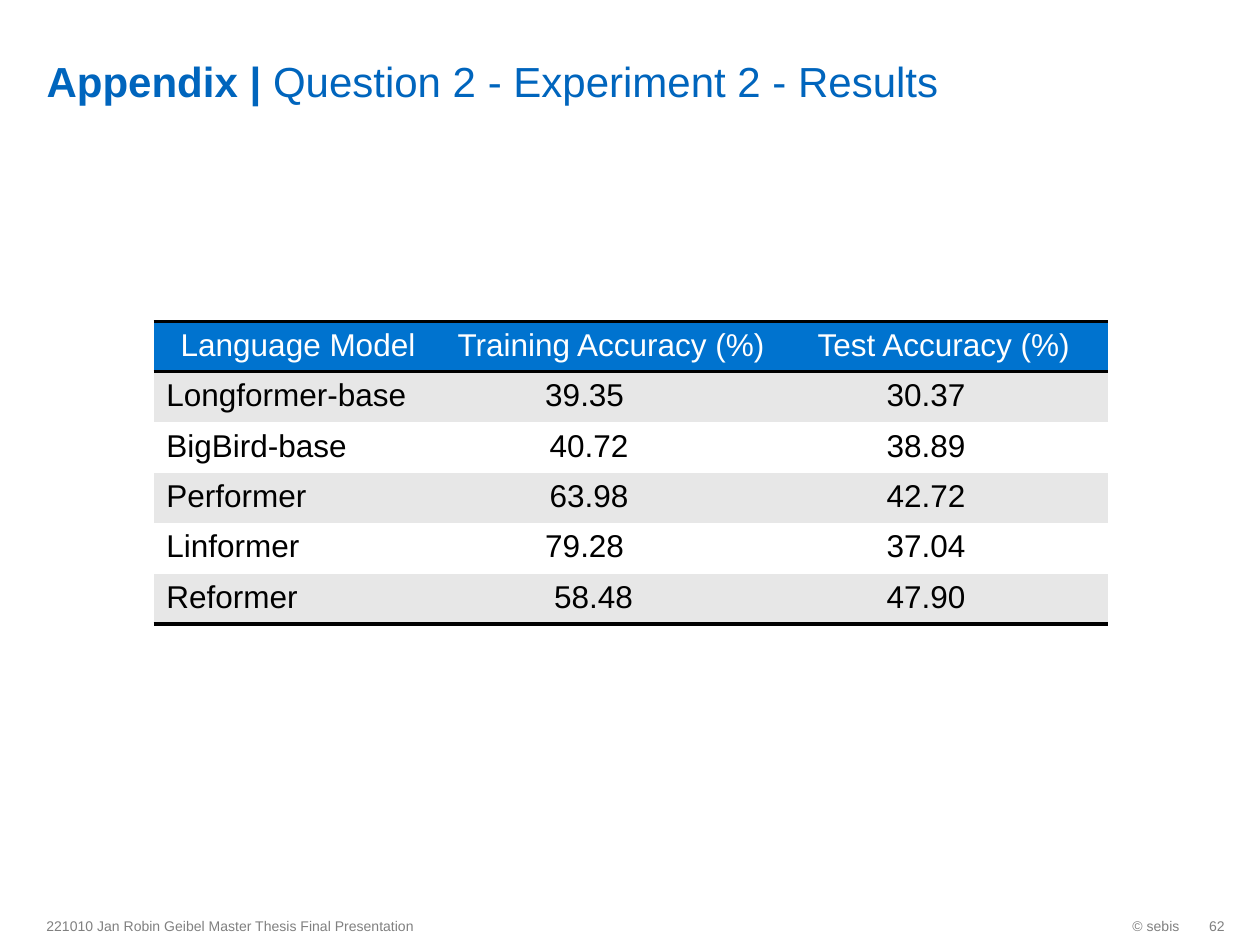
"""Build the appendix slide with the accuracy table of experiment 2."""
from lxml import etree
from pptx import Presentation
from pptx import util as u
from pptx.dml.color import RGBColor
from pptx.enum import text
from pptx.oxml.ns import qn

COLORS = {"title": "0065BD", "header": "0073CF", "band": "E7E7E7",
          "white": "FFFFFF", "black": "000000", "footer": "808080"}
NO_STYLE = "{2D5ABB26-0587-4C30-8999-92F81FD0307C}"
LEFT = 0.27
FOOTER_TOP, FOOTER_HEIGHT = 7.19, 0.32
ROW_HEIGHT = 0.39
COLUMNS = [2.29, 2.68, 2.6]
INSET, SPACE = 0.1, 0.07


def style(r, size, color, bold=False):
    r.font.name = "Arial"
    r.font.size = u.Pt(size)
    r.font.bold = bold
    r.font.color.rgb = RGBColor.from_string(COLORS[color])


def add_border(cell, side):
    ln = etree.SubElement(cell._tc.get_or_add_tcPr(), qn(f"a:{side}"), w=str(u.Pt(2)))
    fill = etree.SubElement(ln, qn("a:solidFill"))
    etree.SubElement(fill, qn("a:srgbClr"), val=COLORS["black"])


prs = Presentation()
prs.slide_width, prs.slide_height = u.Inches(10), u.Inches(7.5)
s = prs.slides.add_slide(prs.slide_layouts[5])

title = s.shapes.title
title.left, title.top = u.Inches(LEFT), u.Inches(0.05)
title.width, title.height = u.Inches(8.24), u.Inches(0.79)
tf = title.text_frame
tf.auto_size = text.MSO_AUTO_SIZE.NONE
tf.vertical_anchor = text.MSO_ANCHOR.BOTTOM
tf.margin_top = tf.margin_bottom = 0
p = tf.paragraphs[0]
p.alignment = text.PP_ALIGN.LEFT
for words, bold in [("Appendix | ", True), ("Question 2 - Experiment 2 - Results", False)]:
    r = p.add_run()
    r.text = words
    style(r, 24, "title", bold)

footers = [
    ("© sebis", 7.7, 1.76, INSET, text.PP_ALIGN.RIGHT),
    ("221010 Jan Robin Geibel Master Thesis Final Presentation", LEFT, 4.73, INSET, text.PP_ALIGN.LEFT),
    ("62", 9.45, 0.27, 0, text.PP_ALIGN.RIGHT),
]
for words, left, width, margin, align in footers:
    sp = s.shapes.add_textbox(u.Inches(left), u.Inches(FOOTER_TOP),
                              u.Inches(width), u.Inches(FOOTER_HEIGHT))
    tf = sp.text_frame
    tf.word_wrap = True
    tf.vertical_anchor = text.MSO_ANCHOR.MIDDLE
    tf.margin_right = u.Inches(margin)
    tf.text = words
    p = tf.paragraphs[0]
    p.alignment = align
    style(p.runs[0], 8, "footer")

rows = [
    ("Language Model", "Training Accuracy (%)", "Test Accuracy (%)"),
    ("Longformer-base", "39.35", "30.37"),
    ("BigBird-base", "40.72", "38.89"),
    ("Performer", "63.98", "42.72"),
    ("Linformer", "79.28", "37.04"),
    ("Reformer", "58.48", "47.90"),
]
shifts = [(0, 0, 0), (0, 6, 4), (0, 5, 4), (0, 5, 4), (0, 6, 4), (0, 4, 4)]
table = s.shapes.add_table(len(rows), len(COLUMNS), u.Inches(1.22), u.Inches(2.55),
                           u.Inches(sum(COLUMNS)), u.Inches(ROW_HEIGHT * len(rows))).table
table._tbl.tblPr.find(qn("a:tableStyleId")).text = NO_STYLE
for column, width in zip(table.columns, COLUMNS):
    column.width = u.Inches(width)

for i, (row, row_shifts) in enumerate(zip(rows, shifts)):
    table.rows[i].height = u.Inches(ROW_HEIGHT)
    header = i == 0
    fill = "header" if header else "band" if i % 2 else "white"
    for j, (words, shift) in enumerate(zip(row, row_shifts)):
        cell = table.cell(i, j)
        if header:
            add_border(cell, "lnT")
        if header or i == len(rows) - 1:
            add_border(cell, "lnB")
        cell.fill.solid()
        cell.fill.fore_color.rgb = RGBColor.from_string(COLORS[fill])
        cell.margin_right = u.Inches(INSET + SPACE * shift)
        cell.text_frame.text = words
        p = cell.text_frame.paragraphs[0]
        p.alignment = text.PP_ALIGN.CENTER if header or j else text.PP_ALIGN.LEFT
        style(p.runs[0], 18, "white" if header else "black")

prs.save("out.pptx")
